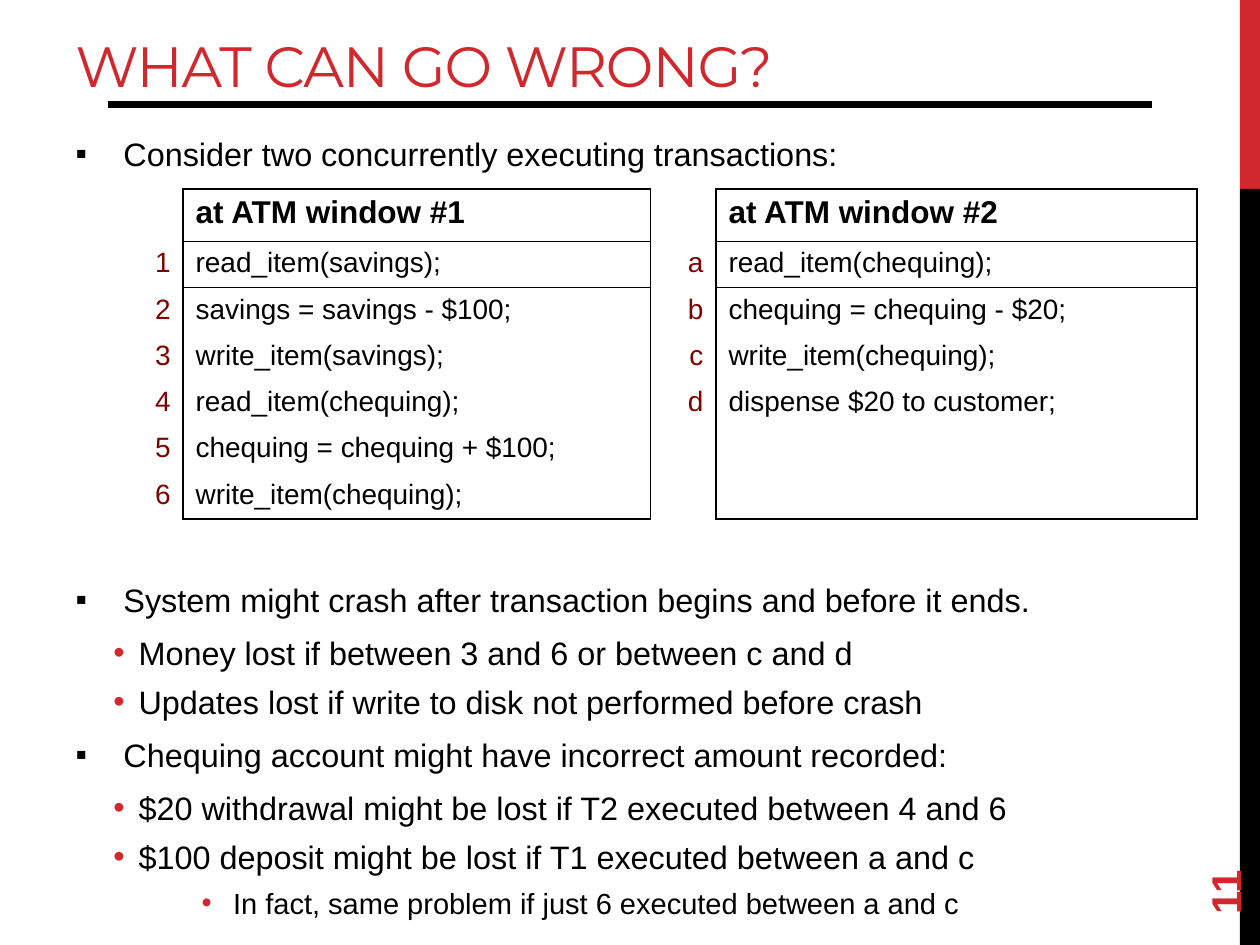
"""Build a slide on what can go wrong with concurrent transactions."""
from dataclasses import dataclass
from itertools import zip_longest

from lxml.etree import SubElement
from pptx import Presentation
from pptx.dml.color import RGBColor
from pptx.enum.shapes import MSO_CONNECTOR, MSO_SHAPE
from pptx.enum.text import MSO_ANCHOR, MSO_AUTO_SIZE, PP_ALIGN
from pptx.oxml.ns import qn
from pptx.util import Emu, Inches, Pt

WIDE, HIGH = Inches(10), Inches(7.5)
COLS, ROWS = 60, 45


@dataclass(frozen=True)
class Theme:
    red: str = "D1282E"
    black: str = "000000"
    white: str = "FFFFFF"
    maroon: str = "800000"
    head: str = "Montserrat"
    text: str = "Arial"
    title: float = 32.4
    body: float = 18.5
    small: float = 16.6
    label: float = 18
    code: float = 16
    page: float = 24


@dataclass(frozen=True)
class Box:
    col: float
    row: float
    wide: float
    high: float

    def place(self) -> tuple[Emu, Emu, Emu, Emu]:
        return across(self.col), down(self.row), across(self.wide), down(self.high)


@dataclass(frozen=True)
class Level:
    left: float
    hang: float
    space: float
    mark: str
    color: str
    size: float


@dataclass(frozen=True)
class Point:
    text: str
    level: int = 0
    before: float | None = None


@dataclass(frozen=True)
class Window:
    title: str
    marks: str
    steps: tuple[str, ...]


THEME = Theme()
LEVELS = (
    Level(0.38, 0.38, 4.8, "▪", THEME.black, THEME.body),
    Level(0.5, 0.2, 2.4, "•", THEME.red, THEME.body),
    Level(1.25, 0.25, 2.4, "•", THEME.red, THEME.small),
)
POINTS = (
    Point("Consider two concurrently executing transactions:"),
    Point("System might crash after transaction begins and before it ends.", before=227),
    Point("Money lost if between 3 and 6 or between c and d", 1),
    Point("Updates lost if write to disk not performed before crash", 1),
    Point("Chequing account might have incorrect amount recorded:"),
    Point("$20 withdrawal might be lost if T2 executed between 4 and 6", 1),
    Point("$100 deposit might be lost if T1 executed between a and c", 1),
    Point("In fact, same problem if just 6 executed between a and c", 2),
)
WINDOWS = (
    Window("at ATM window #1", "123456", (
        "read_item(savings);", "savings = savings - $100;", "write_item(savings);",
        "read_item(chequing);", "chequing = chequing + $100;", "write_item(chequing);")),
    Window("at ATM window #2", "abcd", (
        "read_item(chequing);", "chequing = chequing - $20;",
        "write_item(chequing);", "dispense $20 to customer;")),
)
BARS = ((Box(59.04, 0, 0.96, 9), THEME.red), (Box(59.04, 9, 0.96, 36), THEME.black))


def across(cols: float) -> Emu:
    return Emu(round(WIDE * cols / COLS))


def down(rows: float) -> Emu:
    return Emu(round(HIGH * rows / ROWS))


def move(shape, box: Box) -> None:
    shape.left, shape.top, shape.width, shape.height = box.place()


def style(para, size: float, color: str, face: str = THEME.text, bold: bool = False) -> None:
    font = para.font
    font.size, font.name, font.bold = Pt(size), face, bold
    font.color.rgb = RGBColor.from_string(color)


def add_bar(slide, box: Box, color: str) -> None:
    bar = slide.shapes.add_shape(MSO_SHAPE.RECTANGLE, *box.place())
    bar.shadow.inherit = False
    bar.fill.solid()
    bar.fill.fore_color.rgb = RGBColor.from_string(color)
    bar.line.fill.background()


def add_rule(slide) -> None:
    rule = slide.shapes.add_connector(
        MSO_CONNECTOR.STRAIGHT, across(5.16), down(5), across(54.84), down(5))
    rule.line.width = Pt(4)
    rule.line.color.rgb = RGBColor.from_string(THEME.black)
    SubElement(rule._element.spPr, qn("a:effectLst"))


def fill_title(shape, text: str) -> None:
    move(shape, Box(3, 1, 56, 4))
    frame = shape.text_frame
    frame.text, frame.auto_size = text, MSO_AUTO_SIZE.NONE
    frame.vertical_anchor = MSO_ANCHOR.BOTTOM
    para = frame.paragraphs[0]
    para.alignment = PP_ALIGN.LEFT
    style(para, THEME.title, THEME.red, THEME.head)
    para._p.pPr.find(qn("a:defRPr")).set("spc", "-60")


def fill_point(para, point: Point) -> None:
    level = LEVELS[point.level]
    para.text, para.level = point.text, point.level
    para.line_spacing = 1.04
    para.space_before = Pt(level.space if point.before is None else point.before)
    para.space_after = Pt(level.space)
    props = para._p.get_or_add_pPr()
    props.set("marL", str(Inches(level.left)))
    props.set("indent", str(-Inches(level.hang)))
    SubElement(SubElement(props, qn("a:buClr")), qn("a:srgbClr")).set("val", level.color)
    SubElement(props, qn("a:buFont")).set("typeface", THEME.text)
    SubElement(props, qn("a:buChar")).set("char", level.mark)
    style(para, level.size, THEME.black)


def fill_body(shape) -> None:
    move(shape, Box(3, 6, 54, 36))
    frame = shape.text_frame
    frame.auto_size = MSO_AUTO_SIZE.NONE
    for num, point in enumerate(POINTS):
        fill_point(frame.add_paragraph() if num else frame.paragraphs[0], point)


def fill_cell(cell, text: str, size: float, color: str, sides: str,
              bold: bool = False, right: bool = False) -> None:
    cell.text = text
    para = cell.text_frame.paragraphs[0]
    para.alignment = PP_ALIGN.RIGHT if right else PP_ALIGN.LEFT
    style(para, size, color, bold=bold)
    props = cell._tc.get_or_add_tcPr()
    for side in sides:
        line = SubElement(props, qn(f"a:ln{side}"), w=str(Pt(1)))
        paint = SubElement(line, qn("a:solidFill"))
        SubElement(paint, qn("a:srgbClr")).set("val", THEME.black)
    cell.fill.solid()
    cell.fill.fore_color.rgb = RGBColor.from_string(THEME.white)


def add_steps(slide) -> None:
    cols, rows = (3.72, 22.26, 3.12, 22.9), (2.5,) + (2.13,) * 6
    box = Box(5, 9, sum(cols), sum(rows))
    table = slide.shapes.add_table(len(rows), len(cols), *box.place()).table
    table._tbl.tblPr.find(qn("a:tableStyleId")).text = "{2D5ABB26-0587-4C30-8999-92F81FD0307C}"
    for part, size in zip(table.columns, cols):
        part.width = across(size)
    for part, size in zip(table.rows, rows):
        part.height = down(size)
    last = len(rows) - 1
    for num, window in enumerate(WINDOWS):
        lines = zip_longest(range(last), window.marks, window.steps, fillvalue="")
        cells = [("", window.title)] + [(mark, step) for _, mark, step in lines]
        for row, (mark, step) in enumerate(cells):
            top = row == 0
            sides = "LR" + "T" * (row < 2) + "B" * (row in (0, last))
            fill_cell(table.cell(row, 2 * num), mark, THEME.code, THEME.maroon, "R", right=True)
            fill_cell(table.cell(row, 2 * num + 1), step,
                      THEME.label if top else THEME.code, THEME.black, sides, bold=top)


def add_page(slide, text: str) -> None:
    page = slide.shapes.add_textbox(*Box(54, 38.64, 8.64, 2.4).place())
    page.rotation = 270
    frame = page.text_frame
    frame.text, frame.word_wrap = text, True
    frame.vertical_anchor = MSO_ANCHOR.MIDDLE
    style(frame.paragraphs[0], THEME.page, THEME.red, bold=True)


def main() -> None:
    deck = Presentation()
    deck.slide_width, deck.slide_height = WIDE, HIGH
    slide = deck.slides.add_slide(deck.slide_layouts[1])
    for box, color in BARS:
        add_bar(slide, box, color)
    add_rule(slide)
    fill_title(slide.shapes.title, "WHAT CAN GO WRONG?")
    fill_body(slide.placeholders[1])
    add_page(slide, "11")
    add_steps(slide)
    deck.save("out.pptx")


if __name__ == "__main__":
    main()
